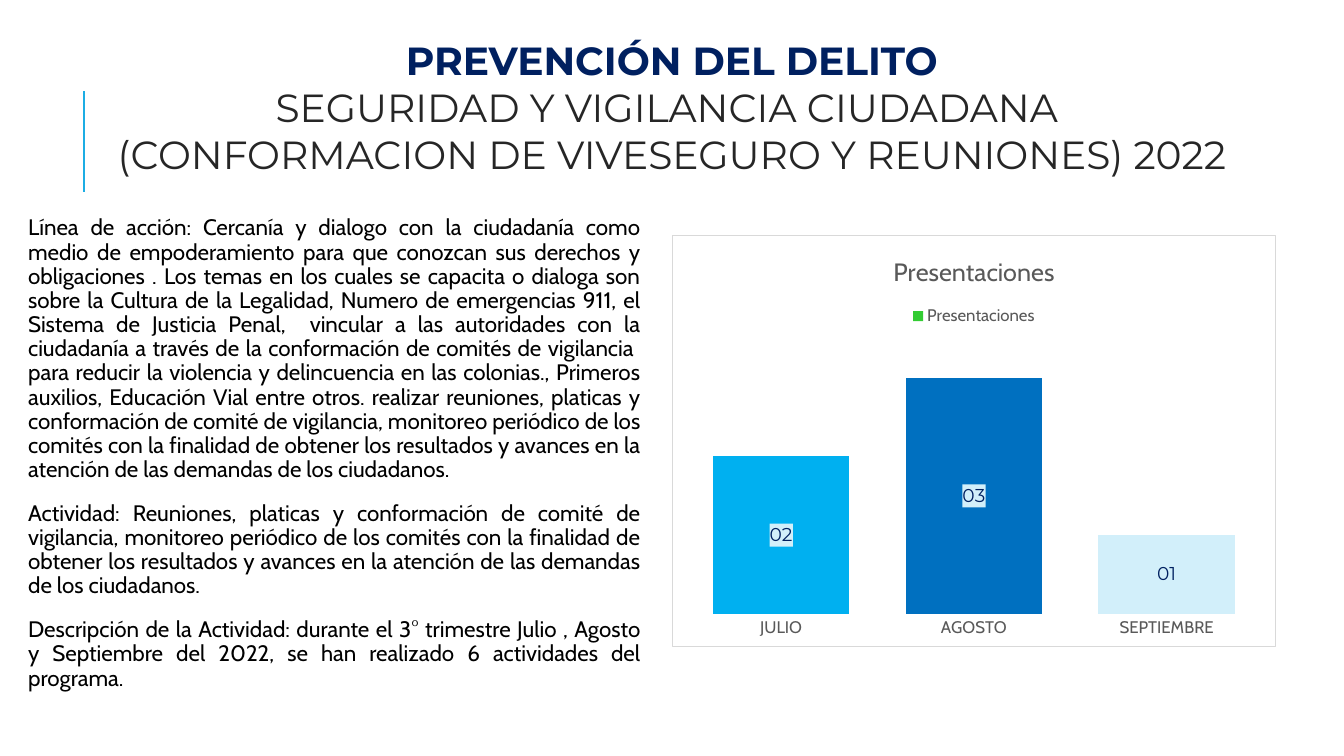
import pptx
import pptx.chart.data
import pptx.dml.color
import pptx.enum.chart
import pptx.enum.shapes
import pptx.enum.text
import pptx.oxml
import pptx.oxml.ns
import pptx.util
from pptx.util import Cm, Pt

ALIGN = pptx.enum.text.PP_ALIGN
NAVY, GRAY = "002060", "595959"

TITLE = [
    ("PREVENCIÓN DEL DELITO", NAVY, True),
    ("SEGURIDAD Y VIGILANCIA CIUDADANA ", "262626", False),
    ("(CONFORMACION DE VIVESEGURO Y REUNIONES) 2022", "262626", False),
]
BODY = [
    "Línea de acción: Cercanía y dialogo con la ciudadanía como medio de empoderamiento "
    "para que conozcan sus derechos y obligaciones . Los temas en los cuales se capacita o "
    "dialoga son sobre la Cultura de la Legalidad, Numero de emergencias 911, el Sistema de "
    "Justicia Penal,  vincular a las autoridades con la ciudadanía a través de la "
    "conformación de comités de vigilancia  para reducir la violencia y delincuencia en las "
    "colonias., Primeros auxilios, Educación Vial entre otros. realizar reuniones, platicas y "
    "conformación de comité de vigilancia, monitoreo periódico de los comités con la "
    "finalidad de obtener los resultados y avances en la atención de las demandas de los "
    "ciudadanos.",
    "Actividad: Reuniones, platicas y conformación de comité de vigilancia, monitoreo "
    "periódico de los comités con la finalidad de obtener los resultados y avances en la "
    "atención de las demandas de los ciudadanos.",
    "Descripción de la Actividad: durante el 3° trimestre Julio , Agosto y Septiembre del "
    "2022, se han realizado 6 actividades del programa.",
]
SERIES, SERIES_COLOR = "Presentaciones", "33CC33"
MONTHS = [("JULIO", 2, "00B0F0"), ("AGOSTO", 3, "0070C0"), ("SEPTIEMBRE", 1, "D2EFFA")]
PLOT_AREA = {"x": 0.02, "y": 0.25, "w": 0.96, "h": 0.67}


def rgb(color):
    return pptx.dml.color.RGBColor.from_string(color)


def style(font, size, color, name="Cabin", bold=False):
    font.size, font.name, font.bold = Pt(size), name, bold
    font.color.rgb = rgb(color)


def xml(text):
    """Parse a fragment that uses the c: and a: prefixes."""
    head, tail = text.split(">", 1)
    slash = "/" if head.endswith("/") else ""
    return pptx.oxml.parse_xml(
        f"{head.rstrip('/')} {pptx.oxml.ns.nsdecls('c', 'a')}{slash}>{tail}")


def text_box(s, left, top, width, height, inset):
    tf = s.shapes.add_textbox(Cm(left), Cm(top), Cm(width), Cm(height)).text_frame
    tf.word_wrap = True
    tf.margin_left = tf.margin_right = Cm(inset)
    tf.margin_top = tf.margin_bottom = Cm(0.13)
    return tf


def add_text(tf, text, align, size, color, **font):
    p = tf.paragraphs[0] if not tf.paragraphs[0].runs else tf.add_paragraph()
    p.alignment = align
    r = p.add_run()
    r.text = text
    style(r.font, size, color, **font)
    return p


def add_rule(s):
    line = s.shapes.add_connector(
        pptx.enum.shapes.MSO_CONNECTOR.STRAIGHT, Cm(2.12), Cm(4.83), Cm(2.12), Cm(2.29))
    line.line.color.rgb = rgb("1CADE4")
    line.line.width = Pt(1.5)
    line._element.spPr.append(xml("<a:effectLst/>"))


def add_month_chart(s):
    data = pptx.chart.data.CategoryChartData(number_format="00")
    data.categories = [month for month, _, _ in MONTHS]
    data.add_series(SERIES, [value for _, value, _ in MONTHS])
    chart = s.shapes.add_chart(
        pptx.enum.chart.XL_CHART_TYPE.COLUMN_STACKED,
        Cm(16.94), Cm(5.93), Cm(15.21), Cm(10.38), data).chart
    style(chart.font, 10, "000000")

    chart.has_title = True
    p = chart.chart_title.text_frame.paragraphs[0]
    r = p.add_run()
    r.text = SERIES
    style(r.font, 18, GRAY)

    chart.has_legend = True
    chart.legend.position = pptx.enum.chart.XL_LEGEND_POSITION.TOP
    chart.legend.include_in_layout = False
    style(chart.legend.font, 12, GRAY)

    months = chart.category_axis
    months.major_tick_mark = pptx.enum.chart.XL_TICK_MARK.NONE
    months.format.line.fill.background()
    style(months.tick_labels.font, 12, GRAY)
    values = chart.value_axis
    values.minimum_scale, values.maximum_scale = 0, 3.5
    values.has_major_gridlines = False
    values.visible = False

    plot = chart.plots[0]
    plot.gap_width, plot.overlap, plot.vary_by_categories = 41, 100, False
    series = plot.series[0]
    series.format.fill.solid()
    series.format.fill.fore_color.rgb = rgb(SERIES_COLOR)
    for i, (_, _, color) in enumerate(MONTHS):
        fill = series.points[i].format.fill
        fill.solid()
        fill.fore_color.rgb = rgb(color)

    labels = series.data_labels
    labels.show_value = True
    labels.number_format, labels.number_format_is_linked = "00", False
    labels.position = pptx.enum.chart.XL_LABEL_POSITION.CENTER
    style(labels.font, 13.3, NAVY, name="Montserrat")
    labels._element.find(pptx.oxml.ns.qn("c:numFmt")).addnext(xml(
        '<c:spPr><a:solidFill><a:srgbClr val="D2EFFA"/></a:solidFill></c:spPr>'))

    space = chart._chartSpace
    space.find(pptx.oxml.ns.qn("c:chart")).addnext(xml(
        '<c:spPr><a:noFill/><a:ln w="9525"><a:solidFill><a:srgbClr val="D9D9D9"/>'
        '</a:solidFill></a:ln></c:spPr>'))
    area = space.chart.plotArea
    for old in area.findall(pptx.oxml.ns.qn("c:layout")):
        area.remove(old)
    sizes = "".join(f'<c:{k} val="{v}"/>' for k, v in PLOT_AREA.items())
    area.insert(0, xml(
        '<c:layout><c:manualLayout><c:layoutTarget val="inner"/><c:xMode val="edge"/>'
        f'<c:yMode val="edge"/>{sizes}</c:manualLayout></c:layout>'))


def main():
    prs = pptx.Presentation()
    prs.slide_width, prs.slide_height = Cm(33.87), Cm(19.05)
    s = prs.slides.add_slide(prs.slide_layouts[6])
    add_rule(s)

    tf = text_box(s, 0.33, 5.33, 15.95, 12.62, 0.13)
    for text in BODY:
        p = add_text(tf, text, ALIGN.JUSTIFY, 16, "000000")
        p.line_spacing, p.space_before, p.space_after = 0.9, Pt(12), Pt(2)
        p._p.get_or_add_pPr().set("marL", str(Cm(0.25)))

    add_month_chart(s)

    tf = text_box(s, 0.33, 0.79, 33.2, 3.63, 0.25)
    for text, color, bold in TITLE:
        add_text(tf, text, ALIGN.CENTER, 28, color, name="Montserrat", bold=bold)
    prs.save("out.pptx")


if __name__ == "__main__":
    main()
